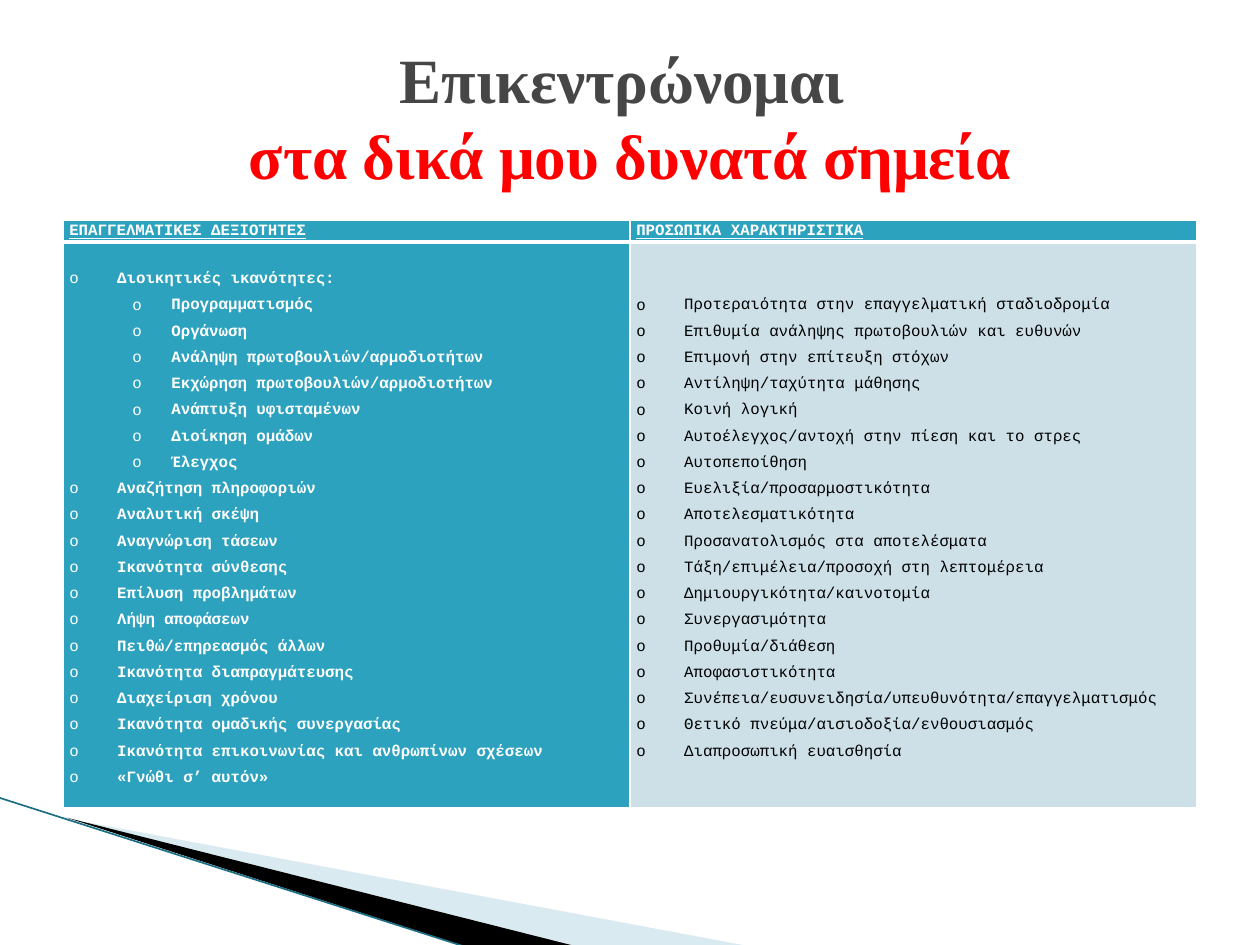
from lxml import etree
from pptx import Presentation, util as u
from pptx.dml.color import RGBColor
from pptx.enum import shapes, text
from pptx.oxml.ns import qn

WIDE, HIGH = 10, 7.5
STEP = WIDE / 20  # one grid column
MONO, SERIF = "Courier New", "Times New Roman"
WHITE, BLACK, TEAL, PALE = "FFFFFF", "000000", "2DA2BF", "CDE0E8"

# Each entry is (level, text)
SKILLS = [(0, "Διοικητικές ικανότητες:")] + [(1, item) for item in (
    "Προγραμματισμός",
    "Οργάνωση",
    "Ανάληψη πρωτοβουλιών/αρμοδιοτήτων",
    "Εκχώρηση πρωτοβουλιών/αρμοδιοτήτων",
    "Ανάπτυξη υφισταμένων",
    "Διοίκηση ομάδων",
    "Έλεγχος",
)] + [(0, item) for item in (
    "Αναζήτηση πληροφοριών",
    "Αναλυτική σκέψη",
    "Αναγνώριση τάσεων",
    "Ικανότητα σύνθεσης",
    "Επίλυση προβλημάτων",
    "Λήψη αποφάσεων",
    "Πειθώ/επηρεασμός άλλων",
    "Ικανότητα διαπραγμάτευσης",
    "Διαχείριση χρόνου",
    "Ικανότητα ομαδικής συνεργασίας",
    "Ικανότητα επικοινωνίας και ανθρωπίνων σχέσεων",
    "«Γνώθι σ’ αυτόν»",
)]
TRAITS = [(0, item) for item in (
    "Προτεραιότητα στην επαγγελματική σταδιοδρομία",
    "Επιθυμία ανάληψης πρωτοβουλιών και ευθυνών",
    "Επιμονή στην επίτευξη στόχων",
    "Αντίληψη/ταχύτητα μάθησης",
    "Κοινή λογική",
    "Αυτοέλεγχος/αντοχή στην πίεση και το στρες",
    "Αυτοπεποίθηση",
    "Ευελιξία/προσαρμοστικότητα",
    "Αποτελεσματικότητα",
    "Προσανατολισμός στα αποτελέσματα",
    "Τάξη/επιμέλεια/προσοχή στη λεπτομέρεια",
    "Δημιουργικότητα/καινοτομία",
    "Συνεργασιμότητα",
    "Προθυμία/διάθεση",
    "Αποφασιστικότητα",
    "Συνέπεια/ευσυνειδησία/υπευθυνότητα/επαγγελματισμός",
    "Θετικό πνεύμα/αισιοδοξία/ενθουσιασμός",
    "Διαπροσωπική ευαισθησία",
)]


def paint(color, value):
    """Set a fill, line or font colour from a hex string."""
    color.rgb = RGBColor.from_string(value)


def style(run, face, size, color, bold):
    run.font.name, run.font.size, run.font.bold = face, u.Pt(size), bold
    paint(run.font.color, color)


def add_wedge(slide, points, color, alpha=None):
    spots = [(u.Inches(x), u.Inches(y)) for x, y in points]
    pen = slide.shapes.build_freeform(*spots[0])
    pen.add_line_segments(spots[1:], close=True)
    wedge = pen.convert_to_shape()
    wedge.shadow.inherit = False
    wedge.line.fill.background()
    wedge.fill.solid()
    paint(wedge.fill.fore_color, color)
    if alpha:
        tint = wedge.fill._xPr.find(".//" + qn("a:srgbClr"))
        etree.SubElement(tint, qn("a:alpha"), val=str(alpha * 1000))


def add_line(slide, start, end, color, width):
    ends = [u.Inches(n) for n in (*start, *end)]
    line = slide.shapes.add_connector(shapes.MSO_CONNECTOR.STRAIGHT, *ends)
    paint(line.line.color, color)
    line.line.width = u.Pt(width)
    etree.SubElement(line._element.spPr, qn("a:effectLst"))


def add_bullet(para, level):
    indent, hang, tab = [(0.38, 0.38, 0.5), (0.81, 0.31, 1)][level]
    para.level = level
    props = para._p.get_or_add_pPr()
    props.set("marL", str(u.Inches(indent)))
    props.set("indent", str(-u.Inches(hang)))
    etree.SubElement(props, qn("a:buFont"), typeface=MONO)
    etree.SubElement(props, qn("a:buChar"), char="o")
    tabs = etree.SubElement(props, qn("a:tabLst"))
    etree.SubElement(tabs, qn("a:tab"), pos=str(u.Inches(tab)), algn="l")
    para.line_spacing = u.Pt(15)


def add_edges(cell, widths):
    """Draw white borders; widths maps a side (L, R, T, B) to points."""
    props = cell._tc.get_or_add_tcPr()
    for spot, (side, width) in enumerate(widths.items()):
        edge = etree.Element(qn("a:ln" + side), w=str(u.Pt(width)))
        fill = etree.SubElement(edge, qn("a:solidFill"))
        etree.SubElement(fill, qn("a:srgbClr"), val=WHITE)
        props.insert(spot, edge)


def fill_cell(cell, lines, back, color, bold):
    cell.fill.solid()
    paint(cell.fill.fore_color, back)
    cell.margin_left = cell.margin_right = u.Inches(0.05)
    cell.margin_top = cell.margin_bottom = 0
    cell.vertical_anchor = text.MSO_ANCHOR.MIDDLE
    cell.text_frame.text = "\n".join(lines)
    for para in cell.text_frame.paragraphs:
        style(para.runs[0], MONO, 9, color, bold)


def add_lists(slide, columns):
    rows = (0.17, 4.49)
    box = [u.Inches(n) for n in (STEP, 3.5 * STEP, 18 * STEP, sum(rows))]
    table = slide.shapes.add_table(2, len(columns), *box).table
    for row, height in zip(table.rows, rows):
        row.height = u.Inches(height)
    for col, (head, items, back, color, bold) in enumerate(columns):
        # Heading
        top = table.cell(0, col)
        fill_cell(top, [head], TEAL, WHITE, True)
        add_edges(top, {"L": 1, "R": 1, "T": 1, "B": 3})
        para = top.text_frame.paragraphs[0]
        para.line_spacing = 1.07
        para.runs[0].font.underline = True
        # Bulleted list
        body = table.cell(1, col)
        fill_cell(body, [item for _, item in items], back, color, bold)
        add_edges(body, {"L": 1, "R": 1, "T": 3, "B": 1})
        for para, (level, _) in zip(body.text_frame.paragraphs, items):
            add_bullet(para, level)


def set_title(slide, lines, colors):
    title = slide.shapes.title
    title.left, title.top = u.Inches(STEP), u.Inches(0.04 * HIGH)
    title.width, title.height = u.Inches(18 * STEP), u.Inches(2.5 * STEP)
    title.text_frame.text = "\v".join(lines)
    title.text_frame.vertical_anchor = text.MSO_ANCHOR.MIDDLE
    para = title.text_frame.paragraphs[0]
    para.alignment = text.PP_ALIGN.CENTER
    for run, color in zip(para.runs, colors):
        style(run, SERIF, 36, color, True)


def main():
    deck = Presentation()
    deck.slide_width, deck.slide_height = u.Inches(WIDE), u.Inches(HIGH)
    slide = deck.slides.add_slide(deck.slide_layouts[5])

    # Corner wedges
    add_wedge(slide, [(0.55, 6.5), (5.95, 7.51), (4.56, 7.51)], "A0CBDC", 40)
    add_wedge(slide, [(0.53, 6.49), (4.57, 7.51), (3.72, 7.52)], BLACK)
    add_line(slide, (-0.01, 6.33), (3.71, 7.52), "1B6F84", 0.95)

    # Skills and traits
    add_lists(slide, [
        ("ΕΠΑΓΓΕΛΜΑΤΙΚΕΣ ΔΕΞΙΟΤΗΤΕΣ", SKILLS, TEAL, WHITE, True),
        ("ΠΡΟΣΩΠΙΚΑ ΧΑΡΑΚΤΗΡΙΣΤΙΚΑ", TRAITS, PALE, BLACK, False),
    ])

    # Title
    set_title(slide, ["Επικεντρώνομαι ", "στα δικά μου δυνατά σημεία"],
              ["464646", "FF0000"])
    deck.save("out.pptx")


if __name__ == "__main__":
    main()
